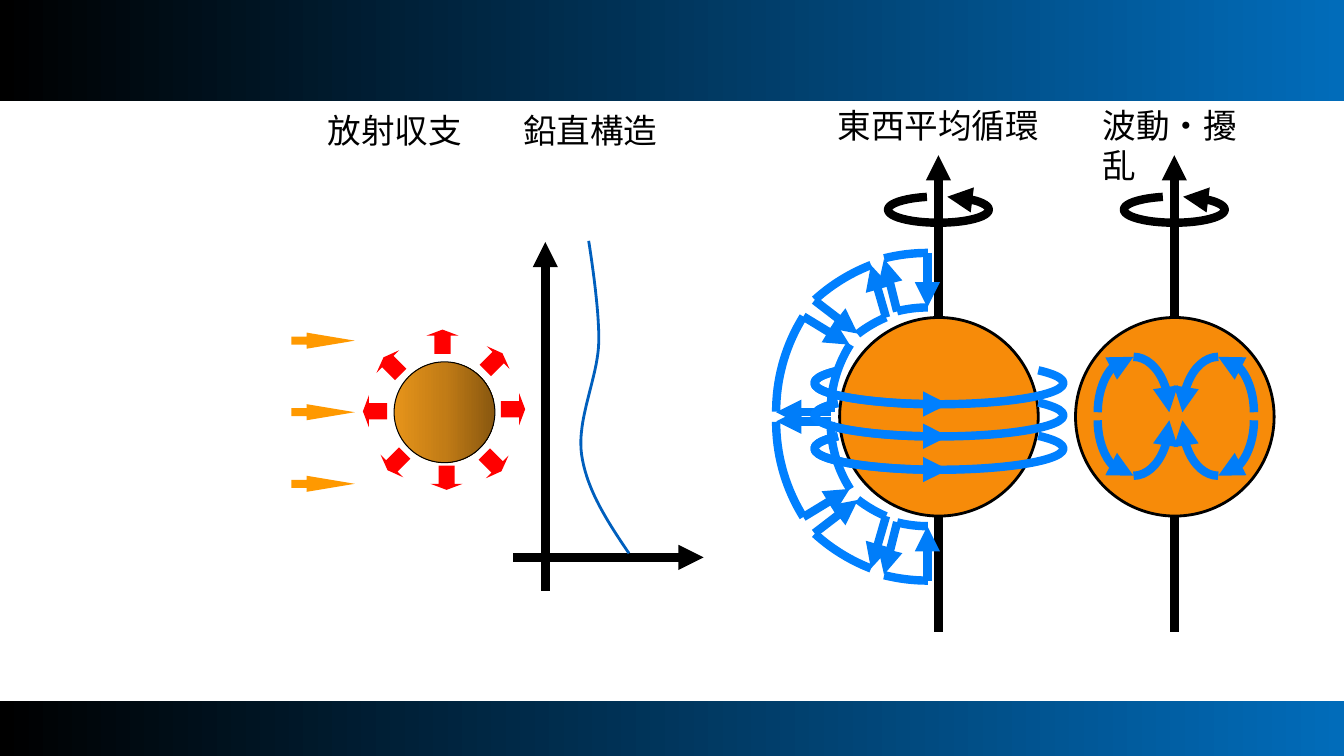
import copy
from dataclasses import dataclass

import lxml.etree
import pptx
import pptx.dml.color
import pptx.enum.dml
import pptx.enum.shapes
import pptx.enum.text
import pptx.oxml.ns
import pptx.shapes.autoshape
import pptx.shapes.base
import pptx.shapes.shapetree
import pptx.util

COLUMNS, ROWS = 133.33, 75
CELL = pptx.util.Inches(0.1)
EQUATOR = 41.35
PRESET = pptx.enum.shapes.MSO_SHAPE
COLORS = {
    "black": "000000", "band": "016CBA", "globe": "F78B09", "sunlight": "FF9900",
    "infrared": "FF0000", "wave": "007DF9", "flow": "0080FF", "profile": "005FBD",
    "day": "E6941A", "dusk": "C27C16", "night": "88570F",
}


@dataclass(frozen=True)
class Box:
    left: float
    top: float
    width: float
    height: float

    def mirrored(self) -> "Box":
        return Box(self.left, 2 * EQUATOR - self.top - self.height, self.width, self.height)


@dataclass(frozen=True)
class Arc:
    box: Box
    start: float
    end: float
    color: str = "flow"
    arrow: str = ""

    def mirrored(self) -> "Arc":
        return Arc(self.box.mirrored(), 360 - self.end, 360 - self.start, self.color)


@dataclass(frozen=True)
class Arrow:
    x1: float
    y1: float
    x2: float
    y2: float
    color: str = "wave"

    def mirrored(self) -> "Arrow":
        return Arrow(self.x1, 2 * EQUATOR - self.y1, self.x2, 2 * EQUATOR - self.y2, self.color)


@dataclass(frozen=True)
class Emission:
    x: float
    y: float
    rotation: int


@dataclass(frozen=True)
class Label:
    text: str
    box: Box


Shapes = pptx.shapes.shapetree.GroupShapes
Drawn = pptx.shapes.base.BaseShape

LABELS = [
    Label("東西平均循環", Box(82.1, 9.9, 22.2, 5)),
    Label("波動・擾乱", Box(108.4, 9.9, 17.2, 5)),
    Label("放射収支", Box(31.5, 10.4, 15.5, 5)),
    Label("鉛直構造", Box(50.9, 10.4, 15.5, 5)),
]
EMISSIONS = [
    Emission(50.9, 40.6, 0), Emission(48.9, 45.9, 45), Emission(44.3, 47.4, 90),
    Emission(39.3, 45.8, 135), Emission(37.2, 40.8, 180), Emission(38.9, 36.3, 225),
    Emission(43.9, 33.9, 270), Emission(49, 35.9, 315),
]
CELL_ARCS = [
    Arc(Box(82.4, 28.4, 24.9, 24.9), 180, 212.43),
    Arc(Box(77, 23, 35.7, 35.7), 180, 211.93),
    Arc(Box(80.3, 30.5, 24.9, 24.9), 231.98, 247.07),
    Arc(Box(75, 25.1, 35.7, 35.7), 227.7, 248.87),
    Arc(Box(79.6, 30.5, 24.9, 24.9), 255.83, 270),
    Arc(Box(74.2, 25.1, 35.7, 35.7), 255.95, 270),
]
CELL_ARROWS = [
    Arrow(82.4, 40.9, 77, 40.9), Arrow(79.7, 31.4, 84.3, 34.2),
    Arrow(80.8, 29.8, 85.1, 33.1), Arrow(87.9, 31.5, 86.4, 26.3),
    Arrow(89, 30.9, 87.7, 25.7), Arrow(92, 25.1, 92, 30.5),
]
PROFILE = [
    (62.4, 54.9), (60.3, 51.8), (58.2, 48.6), (57.7, 45.1), (57.2, 41.6),
    (59.3, 37.5), (59.4, 34), (59.5, 30.5), (58.4, 23.9), (58.4, 23.9),
]


def rgb(color: str) -> pptx.dml.color.RGBColor:
    return pptx.dml.color.RGBColor.from_string(COLORS[color])


def cells(count: float) -> int:
    return round(count * CELL)


def outline(shape: Drawn, color: str, points: float, arrow: str = "") -> None:
    shape.line.color.rgb = rgb(color)
    shape.line.width = pptx.util.Pt(points)
    if arrow:
        stroke = shape.element.spPr.find(pptx.oxml.ns.qn("a:ln"))
        lxml.etree.SubElement(stroke, pptx.oxml.ns.qn(f"a:{arrow}End"), type="triangle")


def add_preset(shapes: Shapes, preset: PRESET, box: Box,
               fill: str = "") -> pptx.shapes.autoshape.Shape:
    shape = shapes.add_shape(preset, cells(box.left), cells(box.top),
                             cells(box.width), cells(box.height))
    shape.shadow.inherit = False
    shape.line.fill.background()
    if fill:
        shape.fill.solid()
        shape.fill.fore_color.rgb = rgb(fill)
    else:
        shape.fill.background()
    return shape


def shade(shape: pptx.shapes.autoshape.Shape, colors: list[str]) -> None:
    shape.fill.gradient()
    shape.fill.gradient_angle = 0
    stops = shape.element.spPr.find(".//" + pptx.oxml.ns.qn("a:gsLst"))
    for _ in colors[2:]:
        stops.append(copy.deepcopy(stops[0]))
    for index, (stop, color) in enumerate(zip(shape.fill.gradient_stops, colors)):
        stop.color.rgb = rgb(color)
        stop.position = index / (len(colors) - 1)


def add_arc(shapes: Shapes, arc: Arc) -> None:
    shape = add_preset(shapes, PRESET.ARC, arc.box)
    shape.adjustments[0] = arc.start * 0.6
    shape.adjustments[1] = arc.end % 360 * 0.6
    outline(shape, arc.color, 6, arc.arrow)


def add_arrow(shapes: Shapes, arrow: Arrow) -> None:
    line = shapes.add_connector(pptx.enum.shapes.MSO_CONNECTOR.STRAIGHT, cells(arrow.x1),
                                cells(arrow.y1), cells(arrow.x2), cells(arrow.y2))
    outline(line, arrow.color, 6, "tail")
    lxml.etree.SubElement(line.element.spPr, pptx.oxml.ns.qn("a:effectLst"))


def add_block_arrow(shapes: Shapes, box: Box, color: str, head: float, rotation: int = 0) -> None:
    shape = add_preset(shapes, PRESET.RIGHT_ARROW, box, color)
    shape.adjustments[1] = head
    shape.rotation = rotation


def add_label(shapes: Shapes, label: Label) -> None:
    box = label.box
    frame = shapes.add_textbox(cells(box.left), cells(box.top),
                               cells(box.width), cells(box.height)).text_frame
    frame.text = label.text
    frame.word_wrap = False
    frame.auto_size = pptx.enum.text.MSO_AUTO_SIZE.SHAPE_TO_FIT_TEXT
    font = frame.paragraphs[0].runs[0].font
    font.name, font.size = "Arial", pptx.util.Pt(24)
    font.color.rgb = rgb("black")


def add_axis(shapes: Shapes, x: float) -> None:
    add_arrow(shapes, Arrow(x, 62.7, x, 15.4, "black"))
    add_arc(shapes, Arc(Box(x - 5, 19.5, 10, 2.6), 304.47, 228.08, "black", "head"))


def add_globe(shapes: Shapes, x: float) -> None:
    globe = add_preset(shapes, PRESET.OVAL, Box(x - 9.8, 31.5, 19.7, 19.7), "globe")
    outline(globe, "black", 2)


def add_waves(shapes: Shapes) -> None:
    add_axis(shapes, 116.5)
    add_globe(shapes, 116.5)
    for left, north, south in ((108.9, "tail", "head"), (117.3, "head", "tail")):
        for start in (270, 180, 0, 90):
            top, arrow = (35.4, north) if start >= 180 else (36.2, south)
            add_arc(shapes, Arc(Box(left, top, 7.1, 11), start, start + 90, "wave", arrow))


def add_radiation(shapes: Shapes) -> None:
    planet = add_preset(shapes, PRESET.OVAL, Box(39.1, 35.9, 10, 10))
    shade(planet, ["day", "dusk", "night"])
    outline(planet, "black", 0.75)
    for ray in range(3):
        add_block_arrow(shapes, Box(28.9, 33 + 7.1 * ray, 6.3, 1.6), "sunlight", 2.99)
    for emission in EMISSIONS:
        box = Box(emission.x - 1.2, emission.y - 1.6, 2.4, 3.2)
        add_block_arrow(shapes, box, "infrared", 0.25, emission.rotation)


def add_profile(shapes: Shapes) -> None:
    add_arrow(shapes, Arrow(54.1, 58.6, 54.1, 24, "black"))
    add_arrow(shapes, Arrow(50.9, 55.3, 69.8, 55.3, "black"))
    points = []
    for first in range(0, len(PROFILE) - 1, 3):
        for step in range(1, 21):
            t = step / 20
            weights = ((1 - t) ** 3, 3 * t * (1 - t) ** 2, 3 * t * t * (1 - t), t ** 3)
            curve = list(zip(weights, PROFILE[first:first + 4]))
            points.append(tuple(cells(sum(w * p[axis] for w, p in curve)) for axis in (0, 1)))
    builder = shapes.build_freeform(cells(PROFILE[0][0]), cells(PROFILE[0][1]))
    builder.add_line_segments(points, close=False)
    profile = builder.convert_to_shape()
    profile.shadow.inherit = False
    profile.fill.background()
    outline(profile, "profile", 2)


def add_circulation(shapes: Shapes) -> None:
    add_axis(shapes, 93.1)
    for arc in CELL_ARCS:
        add_arc(shapes, arc.mirrored())
    for arrow in CELL_ARROWS:
        add_arrow(shapes, arrow.mirrored())
    add_globe(shapes, 93.1)
    for arc in CELL_ARCS:
        add_arc(shapes, arc)
    for arrow in CELL_ARROWS:
        add_arrow(shapes, arrow)
    for top in (39.1, 42.4, 35.9):
        jet = Box(80.8, top, 24.7, 4.2)
        add_arc(shapes, Arc(jet, 352.69, 186.99))
        add_arc(shapes, Arc(jet, 65.95, 186.99, arrow="head"))


def main() -> None:
    deck = pptx.Presentation()
    deck.slide_width, deck.slide_height = cells(COLUMNS), cells(ROWS)
    slide = deck.slides.add_slide(deck.slide_layouts[6])
    for band in (Box(0, 0, COLUMNS, 10), Box(0, 69.5, COLUMNS, 5.5)):
        shade(add_preset(slide.shapes, PRESET.RECTANGLE, band), ["black", "band"])
    for draw in (add_waves, add_radiation, add_profile, add_circulation):
        draw(slide.shapes.add_group_shape().shapes)
    for label in LABELS:
        add_label(slide.shapes, label)
    deck.save("out.pptx")


if __name__ == "__main__":
    main()
